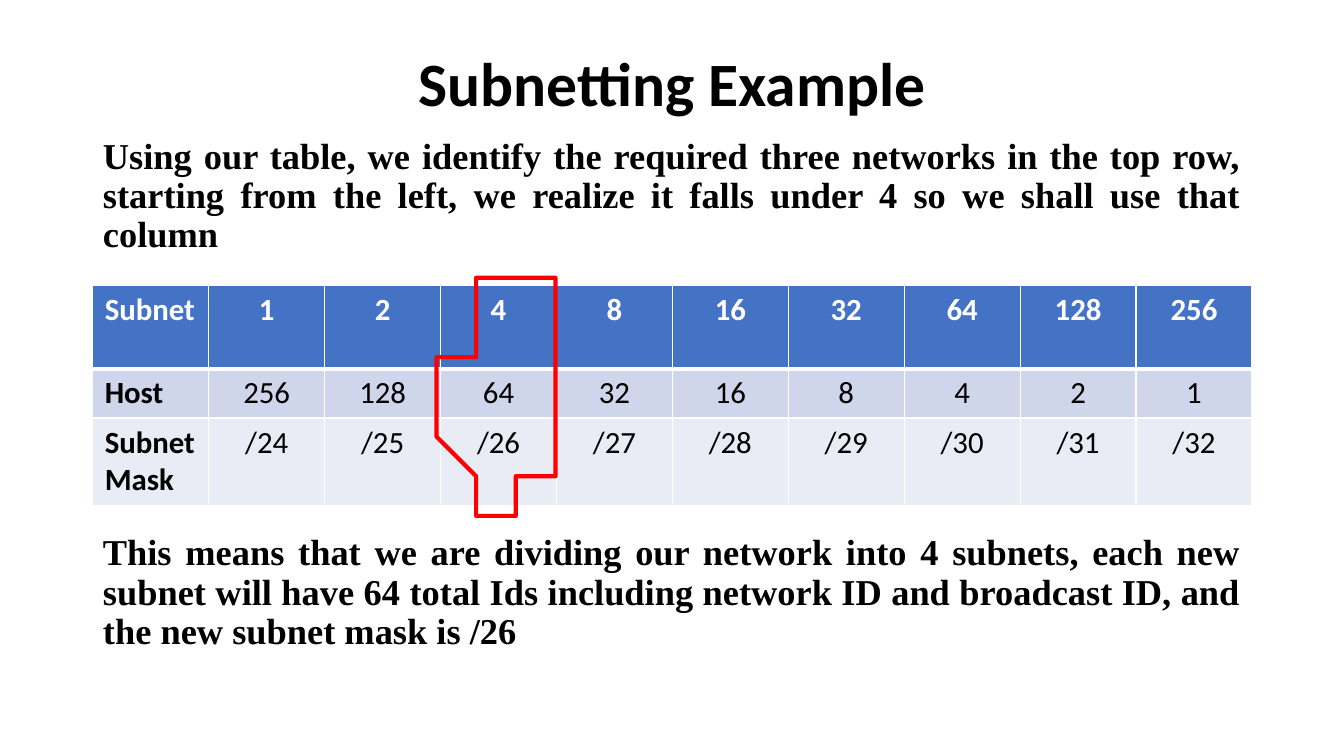
from dataclasses import dataclass

from lxml import etree
from pptx import Presentation
from pptx.dml.color import RGBColor
from pptx.enum.text import MSO_ANCHOR, MSO_AUTO_SIZE, PP_ALIGN
from pptx.oxml.ns import qn
from pptx.util import Cm, Pt

LEFT, CENTER, JUSTIFY = PP_ALIGN.LEFT, PP_ALIGN.CENTER, PP_ALIGN.JUSTIFY
MIDDLE, TOP = MSO_ANCHOR.MIDDLE, MSO_ANCHOR.TOP
NO_AUTOFIT = MSO_AUTO_SIZE.NONE
TITLE_AND_CONTENT = 1


@dataclass(frozen=True)
class Theme:
    heading_font: str = "Calibri"
    body_font: str = "Times New Roman"
    title_size: int = 44
    body_size: int = 26
    table_size: int = 22
    black: str = "000000"
    white: str = "FFFFFF"
    mark: str = "FF0000"


@dataclass(frozen=True)
class Area:
    left: float
    top: float
    width: float
    height: float


@dataclass(frozen=True)
class TableRow:
    label: str
    values: list[str]
    height: float
    fill: str
    color: str
    bold_values: bool
    top_border: int
    bottom_border: int


@dataclass(frozen=True)
class BodyText:
    text: str
    space_before: int


THEME = Theme()
TITLE_AREA = Area(2.34, 1.02, 29.21, 2.34)
BODY_AREA = Area(2.34, 3.35, 29.21, 13.82)
TABLE_AREA = Area(2.34, 7.18, 29.21, 5.54)

BODY = [
    BodyText("Using our table, we identify the required three networks in the top row, "
             "starting from the left, we realize it falls under 4 so we shall use that column", 10),
    # The wide gap leaves room for the table
    BodyText("This means that we are dividing our network into 4 subnets, each new subnet "
             "will have 64 total Ids including network ID and broadcast ID, and the new "
             "subnet mask is /26", 199),
]

# Each step doubles the subnets and halves the hosts
STEPS = range(9)
ROWS = [
    TableRow("Subnet", [str(2 ** n) for n in STEPS], 2.11, "4472C4", THEME.white, True, 1, 3),
    TableRow("Host", [str(2 ** (8 - n)) for n in STEPS], 1.22, "CFD5EA", THEME.black, False, 3, 1),
    TableRow("Subnet Mask", [f"/{24 + n}" for n in STEPS], 2.21, "E9EBF5", THEME.black, False, 1, 1),
]

# Hand-drawn loop around the chosen column, in centimetres
LOOP = [
    (12.37, 7.32), (12.27, 7.44), (11.84, 8.03), (11.56, 8.76), (11.43, 9.04),
    (11.35, 9.4), (11.38, 11.07), (11.51, 11.68), (11.56, 11.84), (11.84, 12.4),
    (11.91, 12.5), (12.29, 12.55), (12.67, 12.55), (13.18, 12.34), (13.44, 12.22),
    (13.67, 11.96), (13.74, 11.46), (13.77, 9.25), (13.82, 8.99), (13.79, 8.1),
    (13.72, 7.77), (13.59, 7.54), (13.56, 7.44), (13.39, 7.32), (13.18, 7.29),
]


def format_paragraph(para, font: str, size: int, color: str, bold: bool, align) -> None:
    para.alignment = align
    para.font.name = font
    para.font.size = Pt(size)
    para.font.bold = bold
    para.font.color.rgb = RGBColor.from_string(color)


def place(box, area: Area, anchor) -> None:
    box.left, box.top = Cm(area.left), Cm(area.top)
    box.width, box.height = Cm(area.width), Cm(area.height)
    frame = box.text_frame
    frame.word_wrap = True
    frame.auto_size = NO_AUTOFIT
    frame.vertical_anchor = anchor


def remove_bullet(para) -> None:
    properties = para._p.get_or_add_pPr()
    properties.set("marL", "0")
    properties.set("indent", "0")
    etree.SubElement(properties, qn("a:buNone"))


def fill_title(title) -> None:
    place(title, TITLE_AREA, MIDDLE)
    title.text_frame.text = "Subnetting Example"
    para = title.text_frame.paragraphs[0]
    format_paragraph(para, THEME.heading_font, THEME.title_size, THEME.black, True, CENTER)
    para.line_spacing = 0.9


def fill_body(body) -> None:
    place(body, BODY_AREA, TOP)
    body.text_frame.text = "\n".join(item.text for item in BODY)
    for para, item in zip(body.text_frame.paragraphs, BODY):
        format_paragraph(para, THEME.body_font, THEME.body_size, THEME.black, True, JUSTIFY)
        para.line_spacing = 0.9
        para.space_before = Pt(item.space_before)
        remove_bullet(para)


def add_borders(cell, row: TableRow) -> None:
    properties = cell._tc.get_or_add_tcPr()
    widths = {"lnL": 1, "lnR": 1, "lnT": row.top_border, "lnB": row.bottom_border}
    for side, width in widths.items():
        line = etree.SubElement(properties, qn(f"a:{side}"), w=str(Pt(width)))
        solid = etree.SubElement(line, qn("a:solidFill"))
        etree.SubElement(solid, qn("a:srgbClr"), val=THEME.white)


def fill_cell(cell, text: str, row: TableRow, bold: bool, align) -> None:
    add_borders(cell, row)
    cell.fill.solid()
    cell.fill.fore_color.rgb = RGBColor.from_string(row.fill)
    cell.margin_left = cell.margin_right = Cm(0.3)
    cell.margin_top = cell.margin_bottom = Cm(0.15)
    cell.text = text
    para = cell.text_frame.paragraphs[0]
    format_paragraph(para, THEME.heading_font, THEME.table_size, row.color, bold, align)


def add_subnet_table(slide) -> None:
    area = TABLE_AREA
    columns = len(STEPS) + 1
    table = slide.shapes.add_table(len(ROWS), columns, Cm(area.left), Cm(area.top),
                                   Cm(area.width), Cm(area.height)).table
    table.horz_banding = False
    for column in table.columns:
        column.width = Cm(area.width / columns)
    for index, row in enumerate(ROWS):
        table.rows[index].height = Cm(row.height)
        fill_cell(table.cell(index, 0), row.label, row, True, LEFT)
        for position, value in enumerate(row.values, start=1):
            fill_cell(table.cell(index, position), value, row, row.bold_values, CENTER)


def add_loop(slide) -> None:
    start, *rest = LOOP
    builder = slide.shapes.build_freeform(*start, scale=Cm(1))
    builder.add_line_segments(rest, close=True)
    loop = builder.convert_to_shape()
    loop.shadow.inherit = False
    loop.fill.background()
    loop.line.color.rgb = RGBColor.from_string(THEME.mark)
    loop.line.width = Pt(3)
    etree.SubElement(loop.line._get_or_add_ln(), qn("a:round"))


def main() -> None:
    deck = Presentation()
    deck.slide_width, deck.slide_height = Cm(33.87), Cm(19.05)
    page = deck.slides.add_slide(deck.slide_layouts[TITLE_AND_CONTENT])
    fill_title(page.shapes.title)
    fill_body(page.placeholders[1])
    add_subnet_table(page)
    add_loop(page)
    deck.save("out.pptx")


if __name__ == "__main__":
    main()
